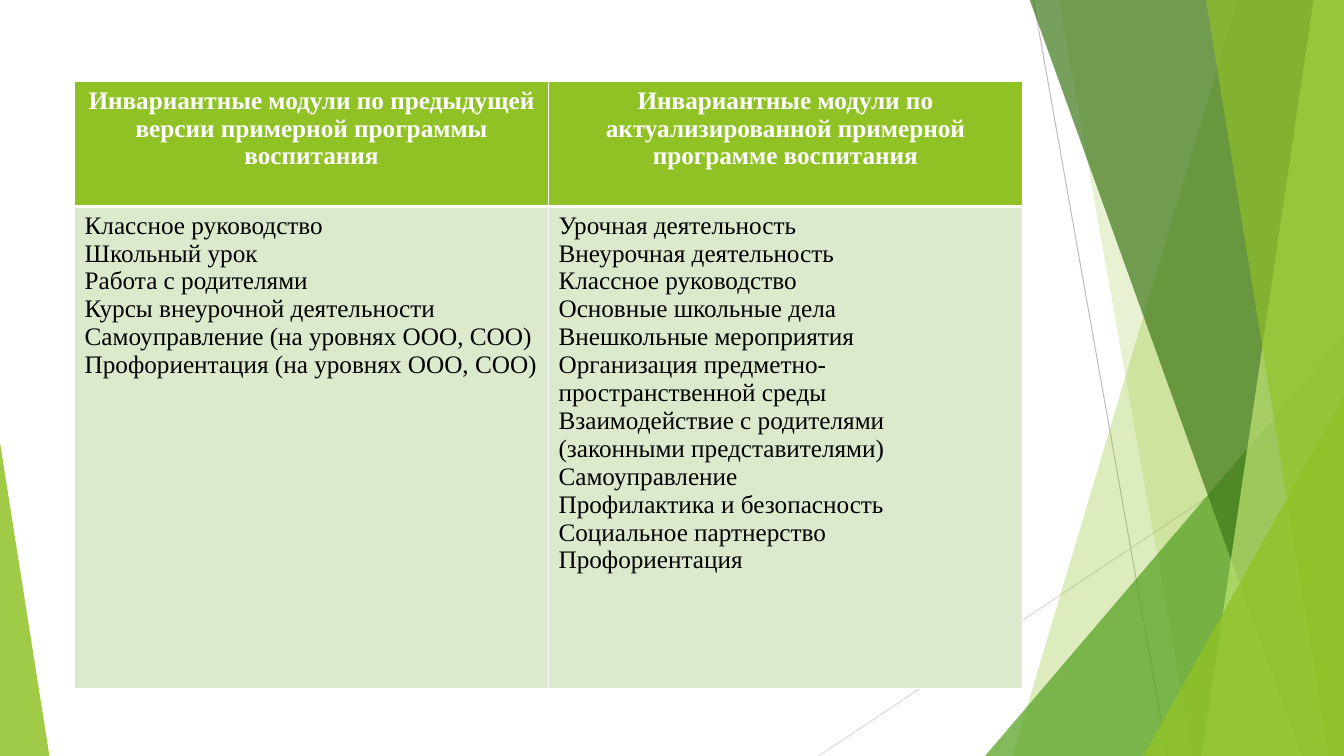
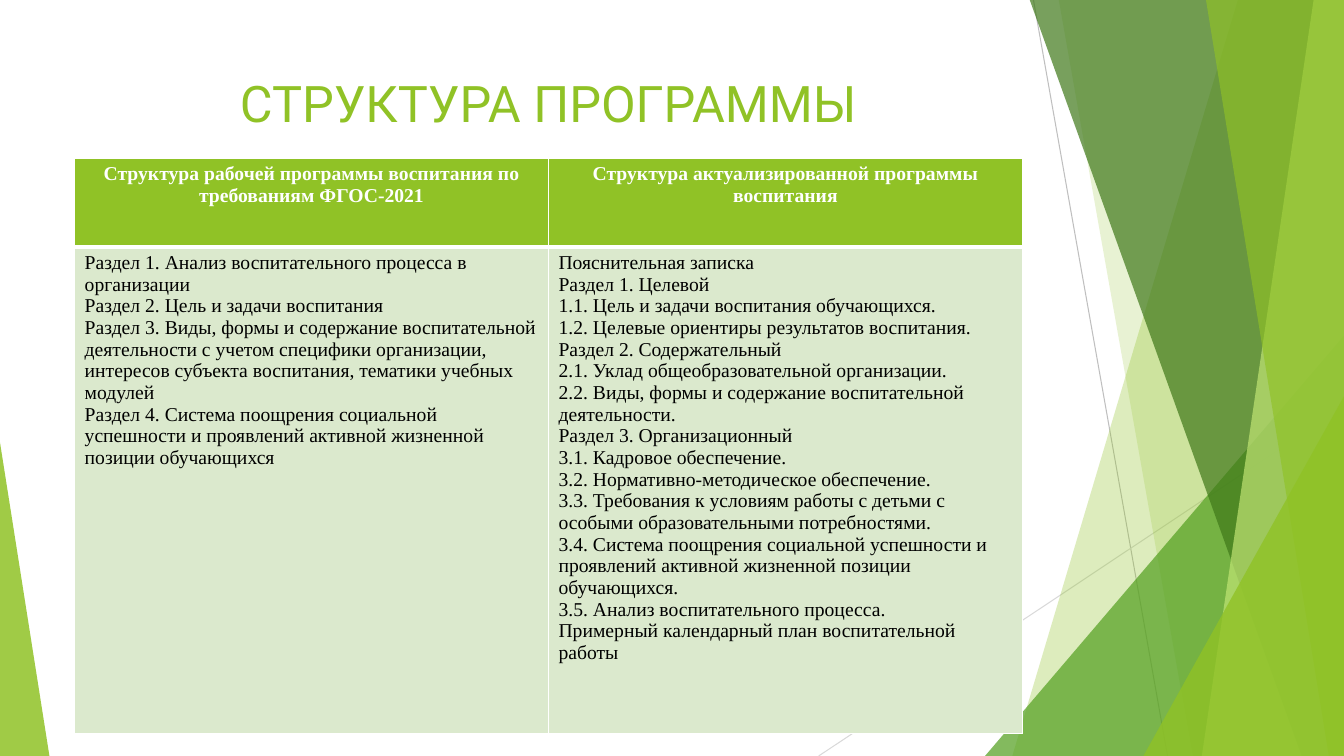
import pptx
import pptx.util
import pptx.dml.color
import pptx.enum.shapes
import pptx.enum.text
import pptx.oxml
import pptx.oxml.ns

WIDTH, HEIGHT = 13.33, 7.5
LEFT, TABLE_WIDTH = 0.74, 9.4
COLORS = {
    "lime": "90C226", "green": "54A021", "forest": "3F7819", "pale": "C0E474",
    "cell": "DBE9CD", "white": "FFFFFF", "black": "000000",
    "gray": "BFBFBF", "silver": "D9D9D9",
}
BODY_FONT, TITLE_FONT = "Times New Roman", "Roboto"

# Backdrop, back to front
LINES = [((10.25, 0), (11.58, HEIGHT), "gray"),
         ((WIDTH, 4.03), (8.12, HEIGHT), "silver")]
# band: top x, bottom x, each reaching the right edge
# triangle: left, top, width, place of the tip
FACETS = [
    ("band", (12.28, 10.04), "lime", 30),
    ("band", (10.5, 11.83), "lime", 20),
    ("triangle", (9.77, 3.33, 3.56, 1), "green", 72),
    ("band", (10.21, 12.91), "forest", 70),
    ("band", (13.03, 11.92), "pale", 70),
    ("band", (11.96, 13.18), "lime", 65),
    ("triangle", (11.34, 3.93, 1.99, 1), "lime", 80),
    ("triangle", (0, 4.39, 0.49, 0), "lime", 85),
]

# Content: each column is a heading and its lines
SLIDES = [
    {"title": None, "top": 0.81, "rows": (1.24, 4.78), "size": 18, "columns": [
        ("Инвариантные модули по предыдущей версии примерной программы воспитания", [
            "Классное руководство",
            "Школьный урок",
            "Работа с родителями",
            "Курсы внеурочной деятельности",
            "Самоуправление (на уровнях ООО, СОО)",
            "Профориентация (на уровнях ООО, СОО)",
        ]),
        ("Инвариантные модули по актуализированной примерной программе воспитания", [
            "Урочная деятельность",
            "Внеурочная деятельность",
            "Классное руководство",
            "Основные школьные дела",
            "Внешкольные мероприятия",
            "Организация предметно-пространственной среды",
            "Взаимодействие с родителями (законными представителями)",
            "Самоуправление",
            "Профилактика и безопасность",
            "Социальное партнерство",
            "Профориентация",
        ]),
    ]},
    {"title": "СТРУКТУРА ПРОГРАММЫ", "top": 1.57, "rows": (0.88, 4.83), "size": 14, "columns": [
        ("Структура рабочей программы воспитания по требованиям ФГОС-2021", [
            "Раздел 1. Анализ воспитательного процесса в организации",
            "Раздел 2. Цель и задачи воспитания",
            "Раздел 3. Виды, формы и содержание воспитательной деятельности с учетом "
            "специфики организации, интересов субъекта воспитания, тематики учебных модулей",
            "Раздел 4. Система поощрения социальной успешности и проявлений активной "
            "жизненной позиции обучающихся",
        ]),
        ("Структура актуализированной программы воспитания", [
            "Пояснительная записка",
            "Раздел 1. Целевой",
            "1.1. Цель и задачи воспитания обучающихся.",
            "1.2. Целевые ориентиры результатов воспитания.",
            "Раздел 2. Содержательный",
            "2.1. Уклад общеобразовательной организации.",
            "2.2. Виды, формы и содержание воспитательной деятельности.",
            "Раздел 3. Организационный",
            "3.1. Кадровое обеспечение.",
            "3.2. Нормативно-методическое обеспечение.",
            "3.3. Требования к условиям работы с детьми с особыми образовательными потребностями.",
            "3.4. Система поощрения социальной успешности и проявлений активной "
            "жизненной позиции обучающихся.",
            "3.5. Анализ воспитательного процесса.",
            "Примерный календарный план воспитательной работы",
        ]),
    ]},
]


def inches(*values):
    return [pptx.util.Inches(value) for value in values]


def rgb(name):
    return pptx.dml.color.RGBColor.from_string(COLORS[name])


def add_element(parent, tag, **attributes):
    element = pptx.oxml.ns.qn(tag)
    child = parent.makeelement(element, attributes)
    parent.append(child)
    return child


def paint(shape, color, opacity):
    shape.shadow.inherit = False
    shape.line.fill.background()
    shape.fill.solid()
    shape.fill.fore_color.rgb = rgb(color)
    color_node = shape.fill._xPr.find(".//" + pptx.oxml.ns.qn("a:srgbClr"))
    add_element(color_node, "a:alpha", val=str(opacity * 1000))


def add_backdrop(page):
    for start, end, color in LINES:
        line = page.shapes.add_connector(
            pptx.enum.shapes.MSO_CONNECTOR.STRAIGHT, *inches(*start, *end))
        line.line.color.rgb = rgb(color)
        line.line.width = pptx.util.Pt(0.75)
        add_element(line._element.spPr, "a:effectLst")
    for kind, place, color, opacity in FACETS:
        if kind == "band":
            top, bottom = place
            corners = [inches(*corner) for corner in (
                (top, -0.01), (WIDTH, -0.01), (WIDTH, HEIGHT), (bottom, HEIGHT))]
            builder = page.shapes.build_freeform(*corners[0])
            builder.add_line_segments(corners[1:], close=True)
            facet = builder.convert_to_shape()
        else:
            left, top, width, tip = place
            facet = page.shapes.add_shape(
                pptx.enum.shapes.MSO_SHAPE.ISOSCELES_TRIANGLE,
                *inches(left, top, width, HEIGHT - top))
            facet.adjustments[0] = tip
        paint(facet, color, opacity)


def write(frame, lines, size, font, color, bold=False, centered=False):
    frame.text = "\n".join(lines)
    for para in frame.paragraphs:
        if centered:
            para.alignment = pptx.enum.text.PP_ALIGN.CENTER
        for span in para.runs:
            span.font.size = pptx.util.Pt(size)
            span.font.name = font
            span.font.bold = bold
            span.font.color.rgb = rgb(color)


def add_borders(cell, top, bottom):
    properties = cell._tc.get_or_add_tcPr()
    widths = {"a:lnL": 1, "a:lnR": 1, "a:lnT": top, "a:lnB": bottom}
    for index, (tag, width) in enumerate(widths.items()):
        border = add_element(properties, tag, w=str(pptx.util.Pt(width)))
        fill = add_element(border, "a:solidFill")
        add_element(fill, "a:srgbClr", val=COLORS["white"])
        properties.insert(index, border)


def add_comparison(page, content):
    columns, rows = content["columns"], content["rows"]
    table = page.shapes.add_table(
        len(rows), len(columns),
        *inches(LEFT, content["top"], TABLE_WIDTH, sum(rows))).table
    for row, height in zip(table.rows, rows):
        row.height = pptx.util.Inches(height)
    for index, (heading, lines) in enumerate(columns):
        table.columns[index].width = pptx.util.Inches(TABLE_WIDTH / len(columns))
        head, body = table.cell(0, index), table.cell(1, index)
        for cell, fill in ((head, "lime"), (body, "cell")):
            cell.fill.solid()
            cell.fill.fore_color.rgb = rgb(fill)
        add_borders(head, 1, 3)
        add_borders(body, 3, 1)
        write(head.text_frame, [heading], content["size"], BODY_FONT, "white",
              bold=True, centered=True)
        write(body.text_frame, lines, content["size"], BODY_FONT, "black")


def add_title(page, title):
    box = page.shapes.add_textbox(*inches(LEFT, 0.67, TABLE_WIDTH, 1.44))
    box.text_frame.word_wrap = True
    write(box.text_frame, [title], 36, TITLE_FONT, "lime", centered=True)


def main():
    deck = pptx.Presentation()
    deck.slide_width, deck.slide_height = inches(WIDTH, HEIGHT)
    for content in SLIDES:
        page = deck.slides.add_slide(deck.slide_layouts[6])
        add_backdrop(page)
        if content["title"]:
            add_title(page, content["title"])
        add_comparison(page, content)
    deck.save("out.pptx")


if __name__ == "__main__":
    main()
